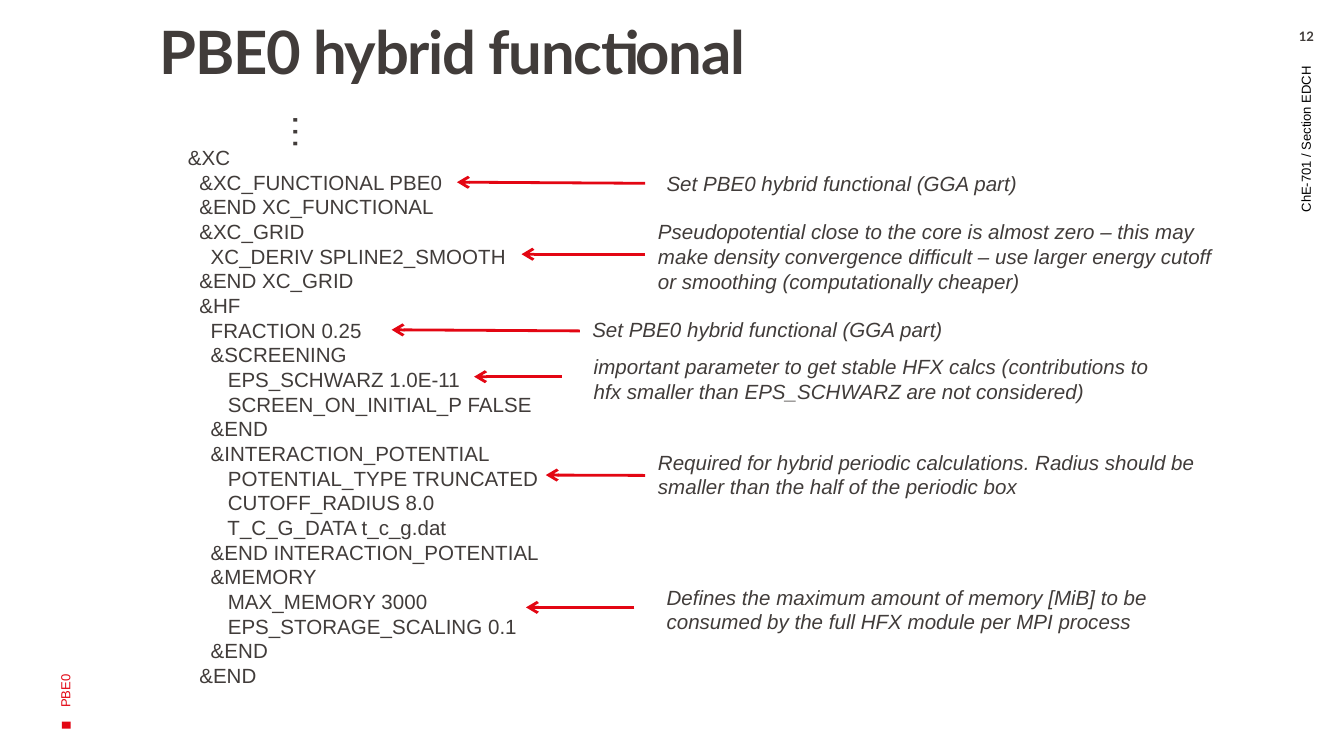
from lxml import etree
from pptx import Presentation
from pptx import util as u
from pptx.dml import color
from pptx.enum import shapes, text
from pptx.oxml import ns

COLORS = {"ink": "413C3A", "red": "E30613", "black": "000000", "white": "FFFFFF"}

CODE = """\
    &XC
      &XC_FUNCTIONAL PBE0
      &END XC_FUNCTIONAL
      &XC_GRID
        XC_DERIV SPLINE2_SMOOTH
      &END XC_GRID
      &HF
        FRACTION 0.25
        &SCREENING
           EPS_SCHWARZ 1.0E-11
           SCREEN_ON_INITIAL_P FALSE
        &END
        &INTERACTION_POTENTIAL
           POTENTIAL_TYPE TRUNCATED
           CUTOFF_RADIUS 8.0
           T_C_G_DATA t_c_g.dat
        &END INTERACTION_POTENTIAL
        &MEMORY
           MAX_MEMORY 3000
           EPS_STORAGE_SCALING 0.1
        &END
      &END"""

# Note text, left, top, height, then arrow start and end
NOTES = [
    ("Set PBE0 hybrid functional (GGA part)",
     350, 87.8, 21, (345.6, 98.2), (244.8, 97.6)),
    ("Pseudopotential close to the core is almost zero – this may make density "
     "convergence difficult – use larger energy cutoff or smoothing "
     "(computationally cheaper)",
     345.4, 114, 47.5, (345.6, 136.2), (279.4, 136.2)),
    ("Set PBE0 hybrid functional (GGA part)",
     310.2, 166.5, 21, (310.6, 177.3), (209.8, 176.7)),
    ("important parameter to get stable HFX calcs (contributions to hfx smaller "
     "than EPS_SCHWARZ are not considered)",
     311, 186, 34, (301, 201.8), (254, 201.8)),
    ("Required for hybrid periodic calculations. Radius should be smaller than "
     "the half of the periodic box",
     345.4, 237.4, 34, (345.6, 254.7), (292.4, 254.5)),
    ("Defines the maximum amount of memory [MiB] to be consumed by the full HFX "
     "module per MPI process",
     350, 309.7, 34, (339.8, 325.4), (281.8, 325.4)),
]


def rgb(name):
    return color.RGBColor.from_string(COLORS[name])


def write(shape, content, size=11, font="Arial", ink="ink", bold=False, italic=False,
          align=text.PP_ALIGN.LEFT, anchor=text.MSO_ANCHOR.TOP,
          insets=(7.2, 3.6, 7.2, 3.6), line_spacing=None, tracking=None):
    """Fill a shape with text, one paragraph per line."""
    frame = shape.text_frame
    frame.word_wrap = True
    frame.auto_size = text.MSO_AUTO_SIZE.NONE
    frame.vertical_anchor = anchor
    (frame.margin_left, frame.margin_top,
     frame.margin_right, frame.margin_bottom) = map(u.Pt, insets)
    for index, line in enumerate(content.split("\n")):
        paragraph = frame.add_paragraph() if index else frame.paragraphs[0]
        paragraph.alignment = align
        if line_spacing:
            paragraph.line_spacing = line_spacing
        run = paragraph.add_run()
        run.text = line
        run.font.name = font
        run.font.size = u.Pt(size)
        run.font.bold = bold
        run.font.italic = italic
        run.font.color.rgb = rgb(ink)
        if tracking:
            run.font._element.set("spc", str(round(tracking * 100)))


def place(shape, left, top, width, height, rotation=0):
    shape.left, shape.top = u.Pt(left), u.Pt(top)
    shape.width, shape.height = u.Pt(width), u.Pt(height)
    shape.rotation = rotation


def add_text(slide, content, left, top, width, height, rotation=0, **style):
    box = slide.shapes.add_textbox(0, 0, 0, 0)
    place(box, left, top, width, height, rotation)
    write(box, content, **style)


def add_title(slide, content):
    title = slide.shapes.title
    place(title, 71.3, 15.1, 492.5, 37.4)
    write(title, content, size=32, font="Lato", bold=True,
          insets=(14.4, 0, 5.8, 3.6), line_spacing=0.8, tracking=-0.7)


def add_arrow(slide, start, end):
    arrow = slide.shapes.add_connector(
        shapes.MSO_CONNECTOR.STRAIGHT, *map(u.Pt, start + end))
    arrow.line.color.rgb = rgb("red")
    arrow.line.width = u.Pt(1.5)
    etree.SubElement(arrow.line._get_or_add_ln(), ns.qn("a:tailEnd"), type="arrow")
    etree.SubElement(arrow._element.spPr, ns.qn("a:effectLst"))


def add_marker(slide, left, top, width, height):
    marker = slide.shapes.add_shape(shapes.MSO_SHAPE.RECTANGLE, 0, 0, 0, 0)
    place(marker, left, top, width, height, 270)
    marker.shadow.inherit = False
    marker.fill.solid()
    marker.fill.fore_color.rgb = rgb("red")
    marker.line.fill.background()


def main():
    presentation = Presentation()
    presentation.slide_width, presentation.slide_height = u.Pt(720), u.Pt(405)
    slide = presentation.slides.add_slide(presentation.slide_layouts[5])
    slide.background.fill.solid()
    slide.background.fill.fore_color.rgb = rgb("white")

    # Margins: course label, page number and section label
    middle = text.MSO_ANCHOR.MIDDLE
    add_marker(slide, 33.6, 386, 3.8, 4.8)
    add_text(slide, "ChE-701 / Section EDCH", 560.2, 147.6, 278.6, 40.3, 270,
             size=7, ink="black", align=text.PP_ALIGN.RIGHT, anchor=middle)
    add_text(slide, "12", 679.7, 15.1, 40.3, 13, size=7, font="Lato", bold=True,
             align=text.PP_ALIGN.CENTER, insets=(7.2, 0, 7.2, 0))
    add_text(slide, "PBE0", -96.5, 218.9, 262.8, 72, 270,
             size=7, ink="red", anchor=middle)

    # Title and input listing
    add_title(slide, "PBE0 hybrid functional")
    add_text(slide, CODE, 81.4, 74.2, 314.6, 300.2)
    add_text(slide, "…", 144.7, 58.3, 40.3, 31.7, 90, size=20)

    # Notes with arrows to the listing
    for content, left, top, height, start, end in NOTES:
        add_arrow(slide, start, end)
        add_text(slide, content, left, top, 322.6, height, italic=True)

    presentation.save("out.pptx")


if __name__ == "__main__":
    main()
